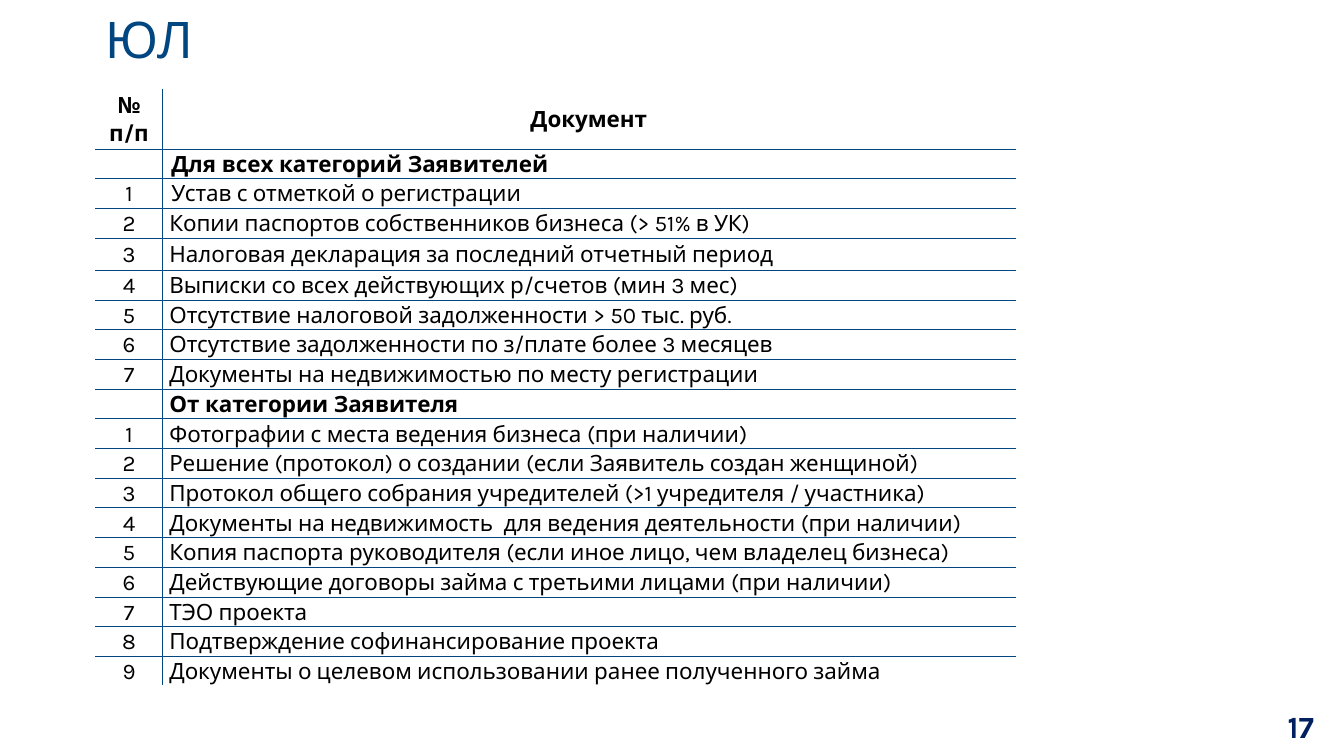
"""Builds the slide listing the documents a legal entity must provide."""
from lxml import etree
from pptx import Presentation
from pptx.dml.color import RGBColor
from pptx.enum import text
from pptx.oxml import ns
from pptx.util import Inches, Pt

BLUE, NAVY, BLACK, WHITE = "004680", "002060", "000000", "FFFFFF"
LEFT, CENTER, RIGHT = text.PP_ALIGN.LEFT, text.PP_ALIGN.CENTER, text.PP_ALIGN.RIGHT


def style(paragraph, size, color, bold=False, align=LEFT, spacing=1.0):
    paragraph.alignment = align
    paragraph.line_spacing = spacing
    paragraph.font.name = "Karla"
    paragraph.font.size = Pt(size)
    paragraph.font.bold = bold
    paragraph.font.color.rgb = RGBColor.from_string(color)


def add_border(cell, side, color, width):
    properties = cell._tc.get_or_add_tcPr()
    line = etree.SubElement(properties, ns.qn(f"a:ln{side}"), w=str(Pt(width)))
    fill = etree.SubElement(line, ns.qn("a:solidFill"))
    etree.SubElement(fill, ns.qn("a:srgbClr"), val=color)


presentation = Presentation()
presentation.slide_width = Inches(13.33)
presentation.slide_height = Inches(7.5)
slide = presentation.slides.add_slide(presentation.slide_layouts[6])

labels = [
    ("ЮЛ", (0.95, -0.03, 11.15, 0.9), 36, BLUE, False, LEFT, 0.9),
    ("17", (10.07, 7.05, 3.06, 0.31), 22, NAVY, True, RIGHT, 1.0),
]
for words, place, size, color, bold, align, spacing in labels:
    box = slide.shapes.add_textbox(*map(Inches, place))
    frame = box.text_frame
    frame.word_wrap = True
    frame.vertical_anchor = text.MSO_ANCHOR.MIDDLE
    frame.text = words
    style(frame.paragraphs[0], size, color, bold, align, spacing)

sections = [
    ("Для всех категорий Заявителей", [
        "Устав с отметкой о регистрации",
        "Копии паспортов собственников бизнеса (> 51% в УК)",
        "Налоговая декларация за последний отчетный период",
        "Выписки со всех действующих р/счетов (мин 3 мес)",
        "Отсутствие налоговой задолженности > 50 тыс. руб.",
        "Отсутствие задолженности по з/плате более 3 месяцев",
        "Документы на недвижимостью по месту регистрации",
    ]),
    ("От категории Заявителя", [
        "Фотографии с места ведения бизнеса (при наличии)",
        "Решение (протокол) о создании (если Заявитель создан женщиной)",
        "Протокол общего собрания учредителей (>1 учредителя / участника)",
        "Документы на недвижимость  для ведения деятельности (при наличии)",
        "Копия паспорта руководителя (если иное лицо, чем владелец бизнеса)",
        "Действующие договоры займа с третьими лицами (при наличии)",
        "ТЭО проекта",
        "Подтверждение софинансирование проекта",
        "Документы о целевом использовании ранее полученного займа",
    ]),
]
rows = [("№ п/п", "Документ", True)]
for heading, documents in sections:
    rows.append(("", heading, True))
    rows += [(str(number), name, False) for number, name in enumerate(documents, 1)]

table_height, header_height, tall_row, tall_height = 5.92, 0.59, 4, 0.32
row_height = (table_height - header_height - tall_height) / (len(rows) - 2)
last_row = len(rows) - 1
table = slide.shapes.add_table(
    len(rows), 2, Inches(0.95), Inches(0.89), Inches(9.12), Inches(table_height)
).table
table.first_row = table.horz_banding = False
table.columns[0].width = Inches(0.66)
table.columns[1].width = Inches(8.46)

for row, (number, name, bold) in enumerate(rows):
    special_heights = {0: header_height, tall_row: tall_height}
    table.rows[row].height = Inches(special_heights.get(row, row_height))
    for column, words in enumerate((number, name)):
        cell = table.cell(row, column)
        cell.vertical_anchor = text.MSO_ANCHOR.MIDDLE
        cell.margin_top = cell.margin_bottom = 0
        narrow = row == 0 or (column == 0 and row < tall_row)
        cell.margin_left = cell.margin_right = Inches(0.02 if narrow else 0.07)

        paragraph = cell.text_frame.paragraphs[0]
        align = CENTER if row == 0 or column == 0 else LEFT
        style(paragraph, 16, BLACK, bold, align, 1.07)
        if words:
            paragraph.add_run().text = words
        else:
            ending = etree.SubElement(paragraph._p, ns.qn("a:endParaRPr"), sz="1600")
            etree.SubElement(ending, ns.qn("a:latin"), typeface="Karla")
        if column == 1 and row in (1, 2):
            paragraph._p.get_or_add_pPr().set("marL", str(Inches(0.02)))

        add_border(cell, "L", *((WHITE, 1) if column == 0 else (BLUE, 0.75)))
        if column == 0:
            add_border(cell, "R", BLUE, 0.75)
        add_border(cell, "T", *((WHITE, 1) if row == 0 else (BLUE, 0.75)))
        if row < last_row:
            add_border(cell, "B", BLUE, 0.75)
        cell.fill.solid()
        cell.fill.fore_color.rgb = RGBColor.from_string(WHITE)

presentation.save("out.pptx")
